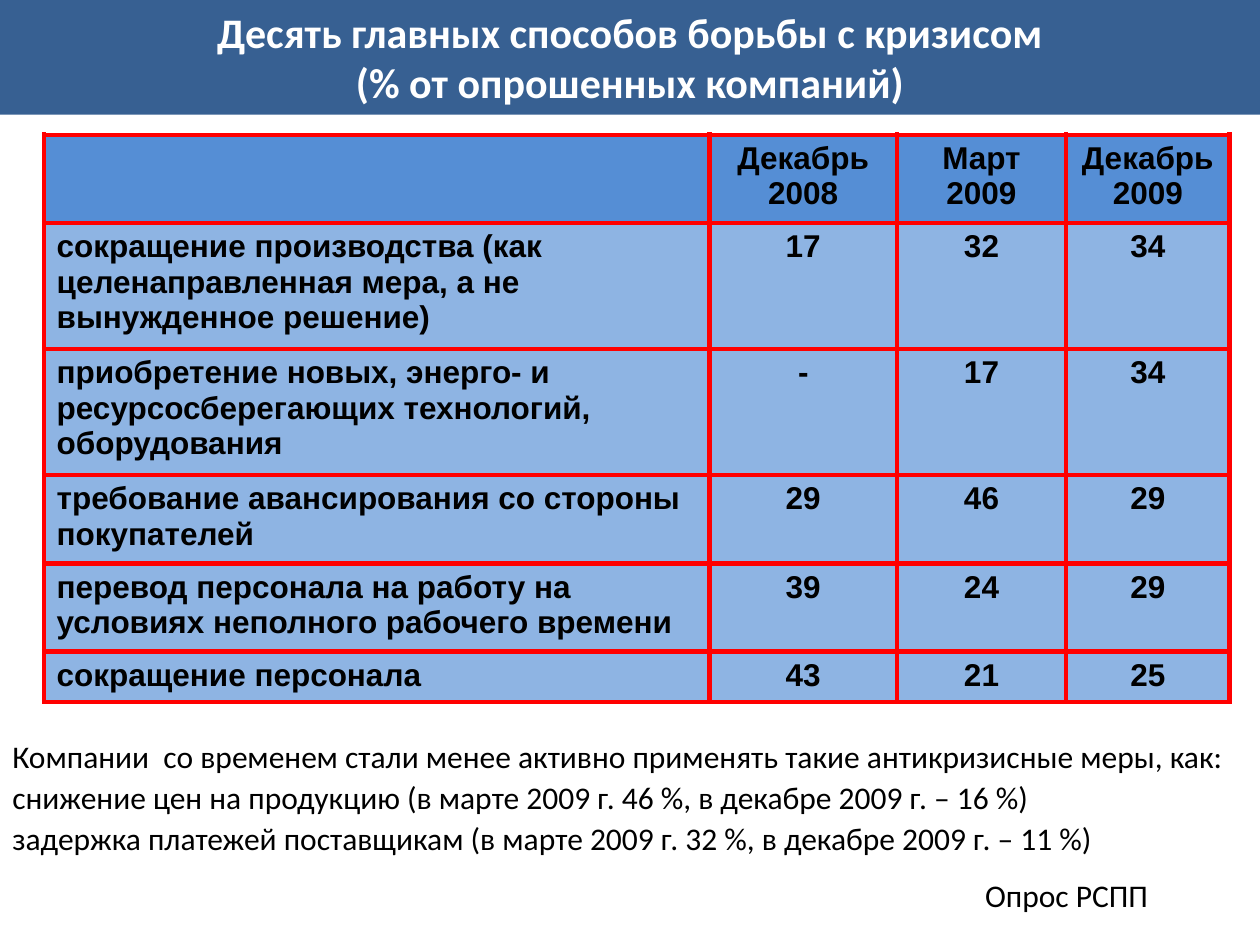
from pptx import Presentation
from pptx.dml.color import RGBColor
from pptx.enum.shapes import MSO_SHAPE
from pptx.enum.text import PP_ALIGN, MSO_ANCHOR
from pptx.oxml import parse_xml
from pptx.oxml.ns import nsdecls
from pptx.util import Inches, Pt

TITLE = ["Десять главных способов борьбы с кризисом", "(% от опрошенных компаний)"]
ROWS = [
    ("", "Декабрь 2008", "Март 2009", "Декабрь 2009"),
    ("сокращение производства (как целенаправленная мера, а не вынужденное решение)", "17", "32", "34"),
    ("приобретение новых, энерго- и ресурсосберегающих технологий, оборудования", "-", "17", "34"),
    ("требование авансирования со стороны покупателей", "29", "46", "29"),
    ("перевод персонала на работу на условиях неполного рабочего времени", "39", "24", "29"),
    ("сокращение персонала", "43", "21", "25"),
]
NOTES = [
    "Компании  со временем стали менее активно применять такие антикризисные меры, как:",
    "снижение цен на продукцию (в марте 2009 г. 46 %, в декабре 2009 г. – 16 %)",
    "задержка платежей поставщикам (в марте 2009 г. 32 %, в декабре 2009 г. – 11 %)",
]
SOURCE = ["Опрос РСПП"]

COL_WIDTHS = [5.28, 1.49, 1.34, 1.3]
ROW_HEIGHTS = [0.7, 1, 1, 0.7, 0.7, 0.4]

THEME = {
    "banner": RGBColor.from_string("376092"),
    "header": RGBColor.from_string("558ED5"),
    "body": RGBColor.from_string("8EB4E3"),
    "border": "FF0000",
    "border_pt": 3,
    "title": {"name": "Calibri", "size": Pt(24), "bold": True, "color": RGBColor(255, 255, 255)},
    "cell": {"name": "Arial", "size": Pt(18), "bold": True, "color": RGBColor(0, 0, 0)},
    "note": {"name": "Calibri", "size": Pt(18), "bold": False, "color": RGBColor(0, 0, 0)},
}


def write(tf, lines, style, align=PP_ALIGN.LEFT, gap=0):
    tf.word_wrap = True
    for i, line in enumerate(lines):
        p = tf.add_paragraph() if i else tf.paragraphs[0]
        p.alignment = align
        if i and gap:
            p.space_before = Pt(gap)
        r = p.add_run()
        r.text = line
        for key, value in style.items():
            if key == "color":
                r.font.color.rgb = value
            else:
                setattr(r.font, key, value)


def set_borders(cell):
    tc_pr = cell._tc.get_or_add_tcPr()
    for i, side in enumerate(("lnL", "lnR", "lnT", "lnB")):
        tc_pr.insert(i, parse_xml(
            f'<a:{side} {nsdecls("a")} w="{Pt(THEME["border_pt"])}"><a:solidFill>'
            f'<a:srgbClr val="{THEME["border"]}"/></a:solidFill></a:{side}>'))


def add_banner(s):
    sp = s.shapes.add_shape(MSO_SHAPE.RECTANGLE, 0, 0, Inches(10), Inches(0.91))
    sp.shadow.inherit = False
    sp.fill.solid()
    sp.fill.fore_color.rgb = THEME["banner"]
    sp.line.fill.background()
    sp.text_frame.vertical_anchor = MSO_ANCHOR.TOP
    write(sp.text_frame, TITLE, THEME["title"], PP_ALIGN.CENTER)


def add_survey_table(s):
    tbl = s.shapes.add_table(
        len(ROWS), len(COL_WIDTHS), Inches(0.35), Inches(1.07),
        Inches(sum(COL_WIDTHS)), Inches(sum(ROW_HEIGHTS))).table
    for col, width in zip(tbl.columns, COL_WIDTHS):
        col.width = Inches(width)
    for i, (row, height) in enumerate(zip(ROWS, ROW_HEIGHTS)):
        tbl.rows[i].height = Inches(height)
        for j, text in enumerate(row):
            cell = tbl.cell(i, j)
            cell.fill.solid()
            cell.fill.fore_color.rgb = THEME["body" if i else "header"]
            set_borders(cell)
            if text:
                write(cell.text_frame, [text], THEME["cell"], PP_ALIGN.CENTER if j else PP_ALIGN.LEFT)


def add_note(s, lines, left, top, width, height, gap=0):
    box = s.shapes.add_textbox(*map(Inches, (left, top, width, height)))
    write(box.text_frame, lines, THEME["note"], gap=gap)


def main():
    prs = Presentation()
    prs.slide_width, prs.slide_height = Inches(10), Inches(7.5)
    s = prs.slides.add_slide(prs.slide_layouts[6])
    add_banner(s)
    add_survey_table(s)
    add_note(s, NOTES, 0, 5.8, 10, 1.07, gap=1.8)
    add_note(s, SOURCE, 7.72, 6.9, 2.28, 0.4)
    prs.save("out.pptx")


if __name__ == "__main__":
    main()
